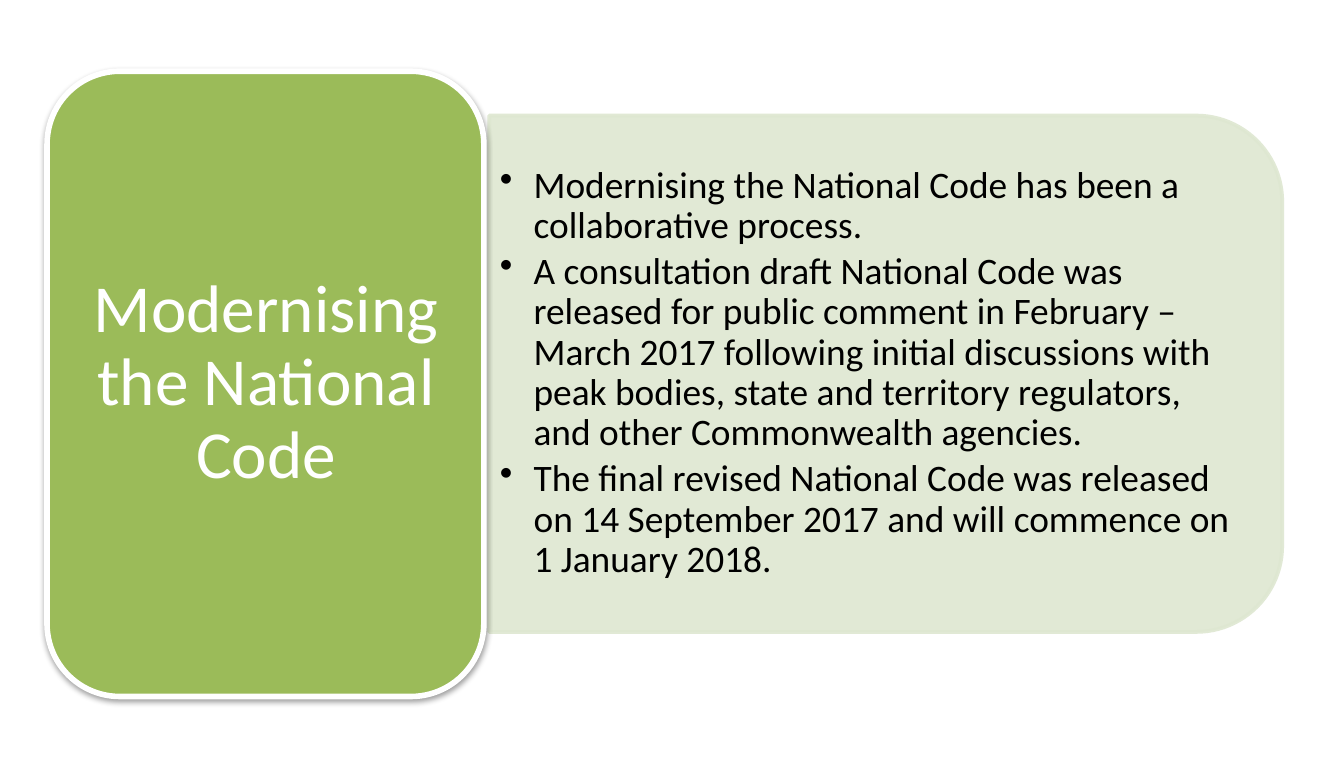
from lxml import etree
from pptx import Presentation
from pptx.dml.color import RGBColor
from pptx.enum.shapes import MSO_SHAPE as Shape
from pptx.enum.text import MSO_ANCHOR as Anchor, PP_ALIGN as Align
from pptx.oxml.ns import qn
from pptx.util import Inches, Pt

COLORS = {"panel": "DEE7D1", "card": "9BBB59", "white": "FFFFFF", "black": "000000"}
FONT = "Calibri"
TITLE = "Modernising the National Code"
POINTS = [
    "Modernising the National Code has been a collaborative process.",
    "A consultation draft National Code was released for public comment in "
    "February – March 2017 following initial discussions with peak bodies, "
    "state and territory regulators, and other Commonwealth agencies.",
    "The final revised National Code was released on 14 September 2017 and "
    "will commence on 1 January 2018.",
]


def rgb(name):
    return RGBColor.from_string(COLORS[name])


def add_block(page, kind, place, fill, line, width):
    block = page.shapes.add_shape(kind, *map(Inches, place))
    block.shadow.inherit = False
    block.fill.solid()
    block.fill.fore_color.rgb = rgb(fill)
    block.line.color.rgb = rgb(line)
    block.line.width = Pt(width)
    return block


def set_alpha(color, percent):
    etree.SubElement(color, qn("a:alpha"), val=str(percent * 1000))


def make_translucent(block, percent):
    """Apply the same opacity to the fill and the outline."""
    for color in block._element.spPr.iter(qn("a:srgbClr")):
        set_alpha(color, percent)


def add_shadow(block):
    effects = block._element.spPr.find(qn("a:effectLst"))
    shadow = etree.SubElement(effects, qn("a:outerShdw"), blurRad=str(Pt(3.1)),
                              dist=str(Pt(1.6)), dir="5400000", rotWithShape="0")
    color = etree.SubElement(shadow, qn("a:srgbClr"), val=COLORS["black"])
    set_alpha(color, 38)


def add_bullet(para):
    para.level = 1
    props = para._p.get_or_add_pPr()
    props.set("marL", str(Inches(0.25)))
    props.set("indent", str(-Inches(0.25)))
    etree.SubElement(props, qn("a:buChar"), char="•")


def add_text(page, place, texts, size, color, inset, align=Align.LEFT,
             bullets=False, gap=0):
    box = page.shapes.add_textbox(*map(Inches, place))
    frame = box.text_frame
    frame.word_wrap = True
    frame.vertical_anchor = Anchor.MIDDLE
    frame.margin_left = frame.margin_right = Inches(inset[0])
    frame.margin_top = frame.margin_bottom = Inches(inset[1])
    for index, text in enumerate(texts):
        para = frame.add_paragraph() if index else frame.paragraphs[0]
        if bullets:
            add_bullet(para)
        para.alignment = align
        para.line_spacing = 0.9
        para.space_after = Pt(gap)
        span = para.add_run()
        span.text = text
        span.font.name = FONT
        span.font.size = Pt(size)
        span.font.color.rgb = rgb(color)


def main():
    deck = Presentation()
    deck.slide_width, deck.slide_height = Inches(10), Inches(5.63)
    page = deck.slides.add_slide(deck.slide_layouts[6])

    panel = add_block(page, Shape.ROUND_2_SAME_RECTANGLE, (4.67, -0.17, 3.84, 5.9),
                      "panel", "panel", 2)
    panel.rotation = 90
    make_translucent(panel, 90)
    add_text(page, (3.64, 1.04, 5.71, 3.47), POINTS, 20, "black", (0.08, 0.04),
             bullets=True, gap=3)

    card = add_block(page, Shape.ROUNDED_RECTANGLE, (0.35, 0.53, 3.25, 4.65),
                     "card", "white", 3)
    add_shadow(card)
    add_text(page, (0.51, 0.69, 2.94, 4.33), [TITLE], 36, "white", (0.15, 0.07),
             align=Align.CENTER)
    deck.save("out.pptx")


if __name__ == "__main__":
    main()
